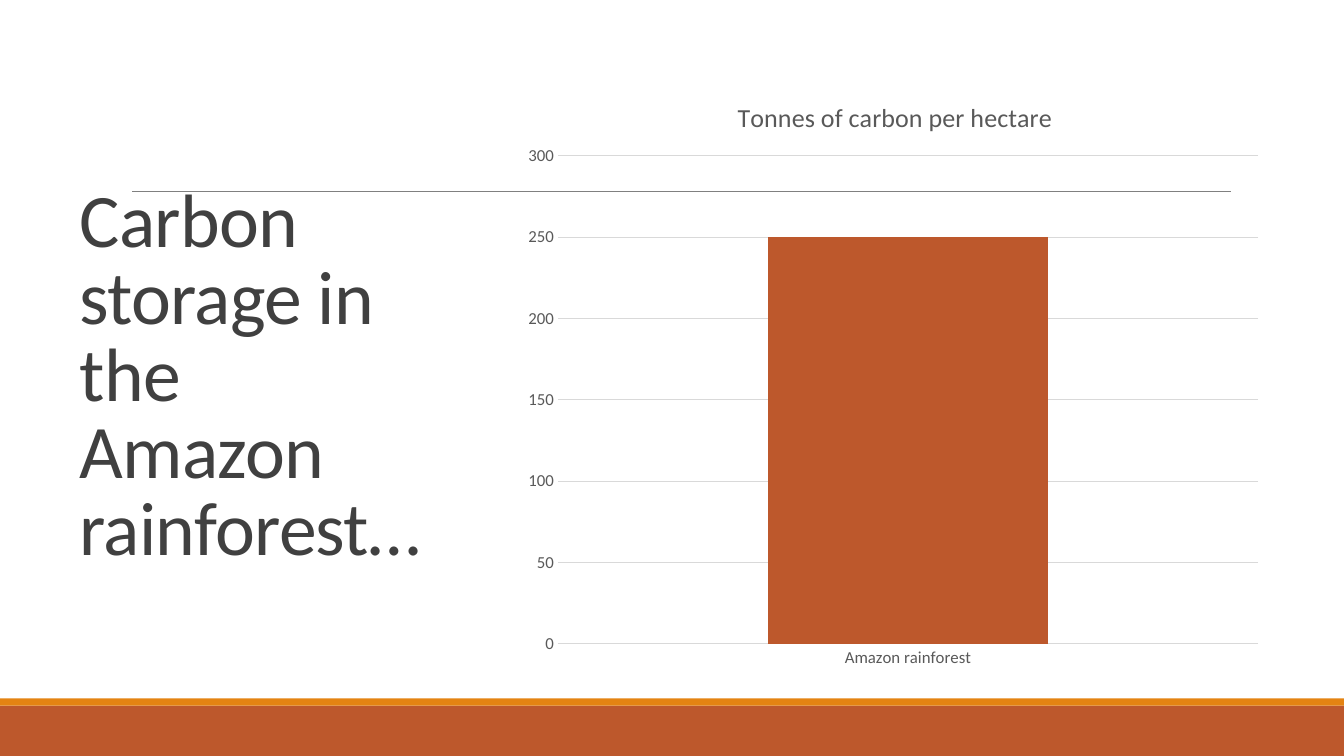
from lxml import etree
from pptx import Presentation
from pptx.chart.data import CategoryChartData
from pptx.dml.color import RGBColor
from pptx.enum.chart import XL_CHART_TYPE, XL_TICK_MARK
from pptx.enum.shapes import MSO_CONNECTOR, MSO_SHAPE
from pptx.enum.text import MSO_ANCHOR, MSO_AUTO_SIZE, PP_ALIGN
from pptx.oxml.ns import qn
from pptx.util import Inches, Pt

RUST, ORANGE = "BD582C", "E48312"
DARK, GREY, RULE, GRID = "404040", "595959", "808080", "D9D9D9"
FONT = "Calibri"


def rgb(color):
    return RGBColor.from_string(color)


def place(element, index, **shares):
    """Give a chart part a manual layout in shares of the chart's size."""
    for old in element.findall(qn("c:layout")):
        element.remove(old)
    layout = etree.Element(qn("c:layout"))
    manual = etree.SubElement(layout, qn("c:manualLayout"))
    if "w" in shares:
        etree.SubElement(manual, qn("c:layoutTarget")).set("val", "inner")
    for side in ("x", "y"):
        etree.SubElement(manual, qn(f"c:{side}Mode")).set("val", "edge")
    for side, share in shares.items():
        etree.SubElement(manual, qn(f"c:{side}")).set("val", str(share))
    element.insert(index, layout)


prs = Presentation()
prs.slide_width, prs.slide_height = Inches(13.33), Inches(7.5)
s = prs.slides.add_slide(prs.slide_layouts[5])

# Footer bands and rule
for top, height, color in ((7, 0.5, RUST), (6.93, 0.07, ORANGE)):
    band = s.shapes.add_shape(MSO_SHAPE.RECTANGLE, 0, Inches(top),
                              prs.slide_width, Inches(height))
    band.shadow.inherit = False
    band.fill.solid()
    band.fill.fore_color.rgb = rgb(color)
    band.line.fill.background()

rule = s.shapes.add_connector(MSO_CONNECTOR.STRAIGHT, Inches(1.31), Inches(1.9),
                              Inches(12.21), Inches(1.9))
rule.line.color.rgb = rgb(RULE)
rule.line.width = Pt(0.5)
etree.SubElement(rule._element.spPr, qn("a:effectLst"))

# Title
title = s.shapes.title
title.left, title.top = Inches(0.69), Inches(0.7)
title.width, title.height = Inches(3.74), Inches(6.11)
tf = title.text_frame
tf.word_wrap = True
tf.auto_size = MSO_AUTO_SIZE.NONE
tf.vertical_anchor = MSO_ANCHOR.MIDDLE
p = tf.paragraphs[0]
p.alignment = PP_ALIGN.LEFT
p.line_spacing = 0.85
p.font.name, p.font.size = FONT, Pt(54)
p.font.color.rgb = rgb(DARK)
r = p.add_run()
r.text = "Carbon storage in the Amazon rainforest…"
r._r.get_or_add_rPr().set("spc", "-50")

# Chart
data = CategoryChartData()
data.categories = ["Amazon rainforest"]
data.add_series("Series 1", [100])
data.add_series("Series 2", [150])
chart = s.shapes.add_chart(XL_CHART_TYPE.COLUMN_STACKED, Inches(5.08), Inches(0.7),
                           Inches(7.55), Inches(6.05), data).chart
chart.has_legend = False
chart.font.name, chart.font.size = FONT, Pt(12)
chart.font.color.rgb = rgb(GREY)

chart.has_title = True
p = chart.chart_title.text_frame.paragraphs[0]
p.text = "Tonnes of carbon per hectare"
p.font.name, p.font.size, p.font.bold = FONT, Pt(18.6), False
p.font.color.rgb = rgb(GREY)
place(chart.chart_title._element, 1, x=0.29, y=0.04)
place(chart._chartSpace.chart.plotArea, 0, x=0.06, y=0.14, w=0.92, h=0.8)

plot = chart.plots[0]
plot.gap_width, plot.overlap = 150, 100
plot.vary_by_categories = False
for series in plot.series:
    series.format.fill.solid()
    series.format.fill.fore_color.rgb = rgb(RUST)

for axis in (chart.category_axis, chart.value_axis):
    axis.major_tick_mark = axis.minor_tick_mark = XL_TICK_MARK.NONE
values = chart.value_axis
values.minimum_scale, values.maximum_scale, values.major_unit = 0, 300, 50
values.format.line.fill.background()
values.has_major_gridlines = True
for line in (chart.category_axis.format.line, values.major_gridlines.format.line):
    line.color.rgb = rgb(GRID)
    line.width = Pt(0.75)

prs.save("out.pptx")
